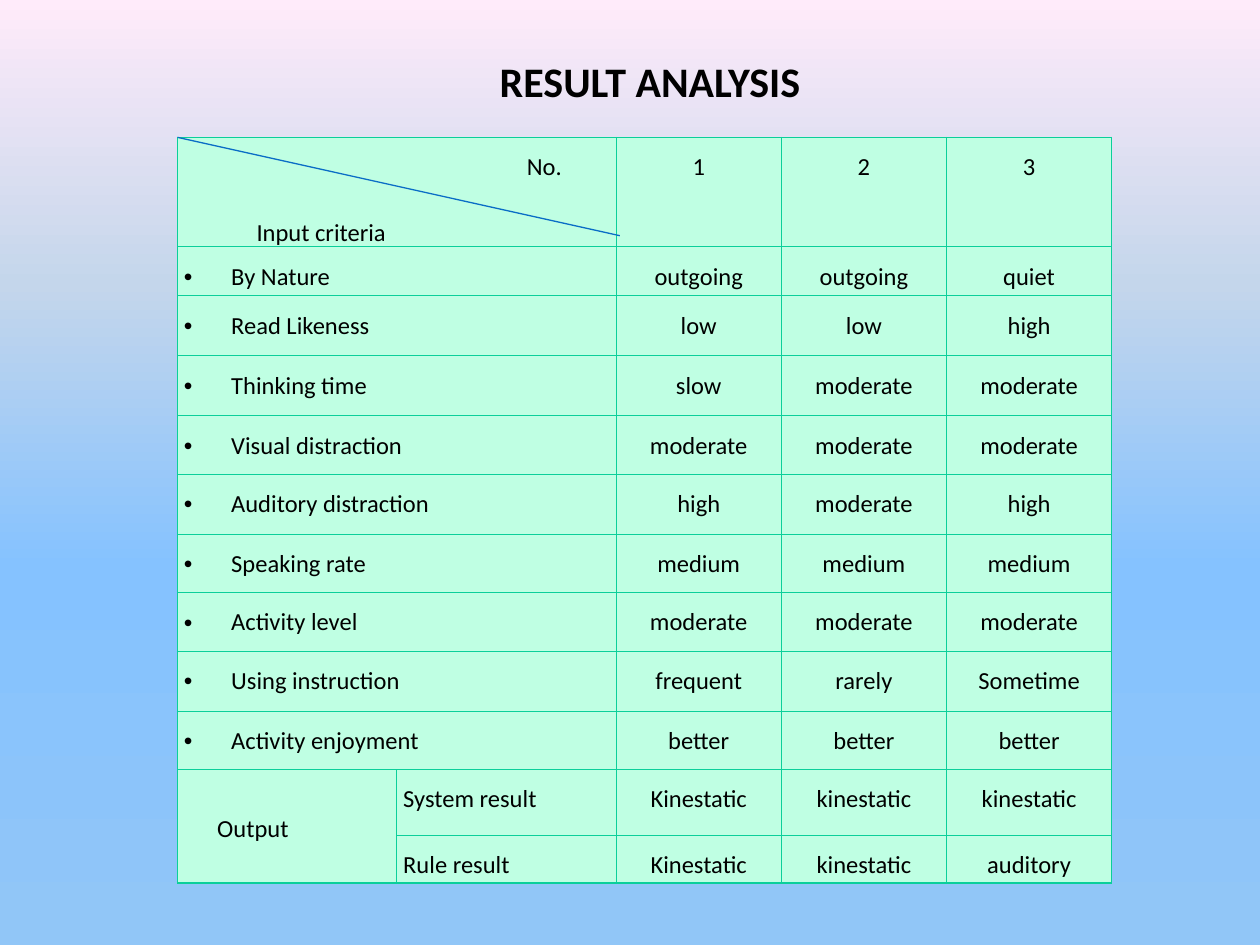
"""Build the RESULT ANALYSIS slide with its learner criteria table."""
from dataclasses import dataclass

from lxml import etree
from pptx import Presentation
from pptx.dml.color import RGBColor
from pptx.enum.shapes import MSO_CONNECTOR
from pptx.enum.text import PP_ALIGN
from pptx.oxml.ns import qn
from pptx.util import Pt

LEFT, CENTER, JUSTIFY = PP_ALIGN.LEFT, PP_ALIGN.CENTER, PP_ALIGN.JUSTIFY
STRAIGHT = MSO_CONNECTOR.STRAIGHT


@dataclass(frozen=True)
class Theme:
    font: str = "Calibri"
    title_size: float = 24
    body_size: float = 14
    text: str = "000000"
    cell: str = "BFFFE3"
    border: str = "0BCF9A"
    diagonal: str = "0A6DC6"
    line_width: float = 0.75
    backdrop: tuple = ((0, "91C6F7"), (40, "85C2FF"), (70, "C4D6EB"), (100, "FFEBFA"))


THEME = Theme()
TITLE = "RESULT ANALYSIS"
LEARNERS = ("1", "2", "3")
CRITERIA = [
    ("By Nature", "outgoing", "outgoing", "quiet"),
    ("Read Likeness", "low", "low", "high"),
    ("Thinking time", "slow", "moderate", "moderate"),
    ("Visual distraction", "moderate", "moderate", "moderate"),
    ("Auditory distraction", "high", "moderate", "high"),
    ("Speaking rate", "medium", "medium", "medium"),
    ("Activity level", "moderate", "moderate", "moderate"),
    ("Using instruction", "frequent", "rarely", "Sometime"),
    ("Activity enjoyment", "better", "better", "better"),
]
RESULTS = [
    ("System result", "Kinestatic", "kinestatic", "kinestatic"),
    ("Rule result", "Kinestatic", "kinestatic", "auditory"),
]

SLIDE_SIZE = (720, 540)
TITLE_BOX = (191.5, 28, 360, 36)
TABLE_LEFT, TABLE_TOP = 101.5, 78.5
COLUMNS = (125.3, 125.3, 94.4, 94.4, 94.4)
ROWS = (62.6, 28, 34.3, 34.3, 33.4, 34.3, 33.4, 33.4, 34.3, 33.4, 37.4, 27.4)
DIAGONAL_SIZE = (252.7, 56.2)
CELL_INSET = 3.6
BULLET_INDENT = 27


def write(frame, text, *, size=THEME.body_size, bold=False, align=LEFT,
          spacing=1.5, before=12, after=0, indent=0, bullet=None):
    first = frame.paragraphs[0]
    paragraph = frame.add_paragraph() if first.runs else first
    paragraph.alignment = align
    paragraph.line_spacing = spacing
    paragraph.space_before, paragraph.space_after = Pt(before), Pt(after)
    properties = paragraph._p.get_or_add_pPr()
    properties.set("marL", str(Pt(indent)))
    properties.set("indent", str(-Pt(indent) if bullet else 0))
    if bullet:
        etree.SubElement(properties, qn("a:buFont"), typeface="Arial")
        etree.SubElement(properties, qn("a:buChar"), char=bullet)
    run = paragraph.add_run()
    run.text = text
    run.font.name, run.font.size, run.font.bold = THEME.font, Pt(size), bold
    run.font.color.rgb = RGBColor.from_string(THEME.text)


def paint_background(slide):
    fill = slide.background.fill
    fill.gradient()
    fill.gradient_angle = 90
    stops = slide.background._cSld.find(".//" + qn("a:gsLst"))
    for stop in list(stops):
        stops.remove(stop)
    for position, color in THEME.backdrop:
        stop = etree.SubElement(stops, qn("a:gs"), pos=str(position * 1000))
        etree.SubElement(stop, qn("a:srgbClr"), val=color)


def style_cell(cell):
    properties = cell._tc.get_or_add_tcPr()
    for side in ("lnL", "lnR", "lnT", "lnB"):
        line = etree.SubElement(properties, qn("a:" + side), w=str(Pt(THEME.line_width)))
        paint = etree.SubElement(line, qn("a:solidFill"))
        etree.SubElement(paint, qn("a:srgbClr"), val=THEME.border)
    cell.fill.solid()
    cell.fill.fore_color.rgb = RGBColor.from_string(THEME.cell)
    cell.margin_left = cell.margin_right = Pt(CELL_INSET)
    cell.margin_top = cell.margin_bottom = 0


def add_results_table(slide):
    table = slide.shapes.add_table(
        len(ROWS), len(COLUMNS), Pt(TABLE_LEFT), Pt(TABLE_TOP),
        Pt(sum(COLUMNS)), Pt(sum(ROWS))).table
    table.first_row = table.horz_banding = False
    for column, width in zip(table.columns, COLUMNS):
        column.width = Pt(width)
    for row, height in zip(table.rows, ROWS):
        row.height = Pt(height)
    for cell in table.iter_cells():
        style_cell(cell)

    first_result = 1 + len(CRITERIA)
    for row in range(first_result):
        table.cell(row, 0).merge(table.cell(row, 1))
    output = table.cell(first_result, 0)
    output.merge(table.cell(first_result + len(RESULTS) - 1, 0))
    output.margin_top = Pt(17)
    write(output.text_frame, "Output", before=0, indent=19)

    corner = table.cell(0, 0).text_frame
    write(corner, "No.", indent=196)
    write(corner, "Input criteria", indent=41.5)
    for row, (criterion, *_) in enumerate(CRITERIA, 1):
        write(table.cell(row, 0).text_frame, criterion, align=JUSTIFY,
              after=8, indent=BULLET_INDENT, bullet="•")
    for row, (result, *_) in enumerate(RESULTS, first_result):
        write(table.cell(row, 1).text_frame, result)

    answers = [LEARNERS] + [values for _, *values in CRITERIA + RESULTS]
    for row, values in enumerate(answers):
        for column, value in enumerate(values, 2):
            write(table.cell(row, column).text_frame, value, align=CENTER)


def add_diagonal(slide):
    width, height = DIAGONAL_SIZE
    diagonal = slide.shapes.add_connector(
        STRAIGHT, Pt(TABLE_LEFT), Pt(TABLE_TOP),
        Pt(TABLE_LEFT + width), Pt(TABLE_TOP + height))
    diagonal.line.color.rgb = RGBColor.from_string(THEME.diagonal)
    diagonal.line.width = Pt(THEME.line_width)
    etree.SubElement(diagonal._element.spPr, qn("a:effectLst"))


def main():
    deck = Presentation()
    deck.slide_width, deck.slide_height = map(Pt, SLIDE_SIZE)
    slide = deck.slides.add_slide(deck.slide_layouts[6])
    paint_background(slide)
    title = slide.shapes.add_textbox(*map(Pt, TITLE_BOX)).text_frame
    title.word_wrap = True
    write(title, TITLE, size=THEME.title_size, bold=True, align=CENTER,
          spacing=1.0, before=0)
    add_results_table(slide)
    add_diagonal(slide)
    deck.save("out.pptx")


if __name__ == "__main__":
    main()
